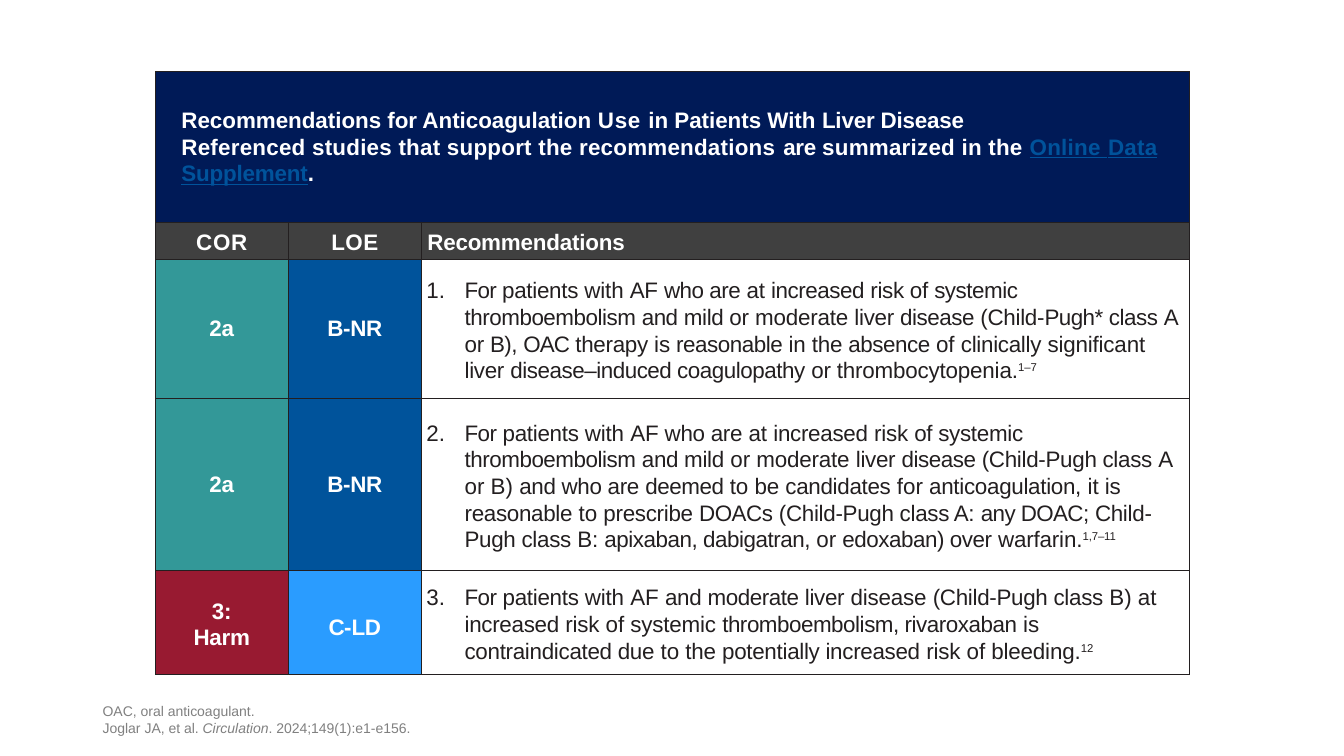
from dataclasses import dataclass
from typing import NamedTuple

from lxml.etree import SubElement
from pptx import Presentation
from pptx.dml.color import RGBColor
from pptx.enum.text import MSO_ANCHOR, PP_ALIGN
from pptx.oxml.ns import qn
from pptx.util import Emu, Inches, Pt


@dataclass(frozen=True)
class Theme:
    font: str = "Arial"
    body: float = 16
    reference: float = 14
    note: float = 10
    border: float = 0.25
    white: str = "FFFFFF"
    ink: str = "231F20"
    gray: str = "808080"
    navy: str = "001A57"
    charcoal: str = "404040"
    teal: str = "339898"
    blue: str = "00539B"
    sky: str = "2A9CFF"
    crimson: str = "981A31"


THEME = Theme()
PAGE_WIDTH, PAGE_HEIGHT = Inches(13.33), Inches(7.5)
# Percent of the page's width and height
TABLE_LEFT, TABLE_TOP = 11.55, 9.47
COLUMNS = (9.9, 9.9, 57.15)
ROWS = (19.87, 4.93, 18.4, 22.8, 13.73)


class Span(NamedTuple):
    text: str
    spacing: float = 0
    color: str = THEME.white
    bold: bool = True
    size: float = THEME.body
    underline: bool = False
    italic: bool = False
    raised: bool = False


class Para(NamedTuple):
    spans: list[Span]
    align: PP_ALIGN = PP_ALIGN.LEFT
    before: float = 0
    line: float = 1
    left: float = 0
    hang: float = 0
    number: int = 0


class Entry(NamedTuple):
    paras: list[Para]
    fill: str
    margins: tuple[float, float, float, float] = (0, 0, 0, 0)


def across(percent: float) -> Emu:
    return Emu(round(PAGE_WIDTH * percent / 100))


def down(percent: float) -> Emu:
    return Emu(round(PAGE_HEIGHT * percent / 100))


def centered(*spans: Span, before: float = 0) -> Para:
    return Para(list(spans), PP_ALIGN.CENTER, before)


def heading(para: Para) -> Entry:
    return Entry([para], THEME.charcoal, (0, 0.04, 0, 0))


def link(text: str, spacing: float = 0.2) -> Span:
    return Span(text, spacing, THEME.blue, underline=True)


def note(text: str, italic: bool = False) -> Span:
    return Span(text, 0, THEME.gray, False, THEME.note, italic=italic)


def recommendation(number: int, before: float, pieces: list[tuple[str, float]], reference: str) -> Entry:
    """Numbered statement from (text, letter spacing) pieces, with raised citations."""
    spans = [Span(text, spacing, THEME.ink, False) for text, spacing in pieces]
    spans.append(Span(reference, -0.1, THEME.ink, False, THEME.reference, raised=True))
    para = Para(spans, before=before, line=1.07, left=0.43, hang=-0.38, number=number)
    return Entry([para], THEME.white, (0, 0.03, 0, 0))


TITLE = Entry([
    Para([Span("Recommendations for Anticoagulation "), Span("Use ", 0.6),
          Span("in Patients With "), Span("Liver Disease", -0.1)], before=2.5, line=1.07, left=0.06),
    Para([Span("Referenced studies that support the recommendations ", 0.2), Span("are ", -0.2),
          Span("summarized in the ", 0.2), link("Online"), link(" ", 0.7), link("Data"),
          link(" ", 0.7), link("Supplement", -0.1), Span(".", -0.1)], line=1.07, left=0.06),
], THEME.navy, (0.2, 0.2, 0.2, 0.2))

CLASS_2A = Entry([centered(Span("2a", -0.2))], THEME.teal)
LEVEL_B = Entry([centered(Span("B-NR", -0.2))], THEME.blue)
HARM = Entry([centered(Span("3:", -0.2)), centered(Span("Harm", -0.2), before=0.6)],
             THEME.crimson, (0, 0.05, 0, 0))
LEVEL_C = Entry([centered(Span("C-", -0.4), Span("LD", -0.2))], THEME.sky, (0, 0.11, 0, 0))

TABLE_ROWS = [
    [TITLE],
    [heading(centered(Span("COR", 0.5), before=3)),
     heading(centered(Span("LOE", 0.4), before=3)),
     heading(Para([Span("Recommendations", -0.1)], before=3, left=0.06))],
    [CLASS_2A, LEVEL_B, recommendation(1, 2.3, [
        ("For ", -0.5), ("patients ", -0.2), ("with ", -0.1), ("AF ", -0.2), ("who are ", -0.3),
        ("at ", -0.1), ("increased ", -0.3), ("risk of ", -0.2), ("systemic thromboembolism ", -0.3),
        ("and ", -0.4), ("mild or ", -0.2), ("moderate ", -0.1), ("liver ", -0.2), ("disease ", -0.3),
        ("(Child-", -0.2), ("Pugh* ", -0.4), ("class ", -0.3), ("A ", 0), ("or ", -0.2), ("B), ", -0.4),
        ("OAC ", -0.6), ("therapy ", -0.2), ("is ", -0.1), ("reasonable ", -0.3), ("in ", -0.1),
        ("the ", -0.2), ("absence ", -0.3), ("of ", 0), ("clinically ", -0.2), ("significant ", -0.1),
        ("liver ", -0.2), ("disease–induced coagulopathy ", -0.3), ("or ", -0.2),
        ("thrombocytopenia.", -0.1)], "1–7")],
    [CLASS_2A, LEVEL_B, recommendation(2, 1.9, [
        ("For ", -0.4), ("patients ", -0.2), ("with ", -0.1), ("AF", 0), (" who are ", -0.2), ("at ", 0),
        ("increased ", -0.2), ("risk ", -0.1), ("of systemic ", -0.2), ("thromboembolism ", -0.3),
        ("and mild ", -0.2), ("or ", 0), ("moderate ", -0.1), ("liver ", -0.2), ("disease ", -0.3),
        ("(Child-Pugh class ", -0.2), ("A or B) ", 0), ("and who are ", -0.2), ("deemed ", -0.3),
        ("to ", 0), ("be ", -0.1), ("candidates ", -0.2), ("for ", 0), ("anticoagulation, ", -0.2),
        ("it ", 0), ("is reasonable ", -0.2), ("to ", 0), ("prescribe ", -0.2), ("DOACs ", -0.3),
        ("(Child-Pugh class A: ", -0.2), ("any DOAC; ", -0.4), ("Child-Pugh class ", -0.2),
        ("B: ", -0.1), ("apixaban, dabigatran, ", -0.3), ("or ", 0), ("edoxaban) over", -0.3),
        (" warfarin.", -0.1)], "1,7–11")],
    [HARM, LEVEL_C, recommendation(3, 1.9, [
        ("For ", -0.4), ("patients ", -0.2), ("with ", -0.1), ("AF ", 0), ("and ", -0.2),
        ("moderate ", -0.3), ("liver ", -0.2), ("disease ", -0.1), ("(Child-Pugh class ", -0.2),
        ("B) at ", 0), ("increased", -0.2), (" risk ", -0.1), ("of", 0), (" systemic ", -0.1),
        ("thromboembolism, rivaroxaban ", -0.3), ("is ", 0), ("contraindicated due ", -0.2), ("to", 0),
        (" the ", -0.1), ("potentially increased", -0.2), (" risk ", -0.1), ("of", 0),
        (" bleeding.", -0.1)], "12")],
]

FOOTNOTE = [
    Para([note("OAC, oral anticoagulant.")]),
    Para([note("Joglar JA, et al. "), note("Circulation", italic=True), note(". 2024;149(1):e1-e156.")]),
]


def write(frame, paras: list[Para]) -> None:
    for index, item in enumerate(paras):
        para = frame.add_paragraph() if index else frame.paragraphs[0]
        properties = para._p.get_or_add_pPr()
        properties.set("marL", str(Inches(item.left)))
        properties.set("indent", str(Inches(item.hang)))
        if item.number:
            SubElement(properties, qn("a:buAutoNum"), type="arabicPeriod", startAt=str(item.number))
        para.alignment = item.align
        para.line_spacing = item.line
        para.space_before = Pt(item.before)
        for piece in item.spans:
            span = para.add_run()
            span.text = piece.text
            font = span.font
            font.name, font.size = THEME.font, Pt(piece.size)
            font.bold, font.italic, font.underline = piece.bold, piece.italic, piece.underline
            font.color.rgb = RGBColor.from_string(piece.color)
            settings = span._r.get_or_add_rPr()
            settings.set("spc", str(round(piece.spacing * 100)))
            if piece.raised:
                settings.set("baseline", "35000")


def add_borders(cell) -> None:
    properties = cell._tc.get_or_add_tcPr()
    for side in ("lnL", "lnR", "lnT", "lnB"):
        line = SubElement(properties, qn(f"a:{side}"), w=str(Pt(THEME.border)))
        SubElement(SubElement(line, qn("a:solidFill")), qn("a:srgbClr"), val=THEME.ink)


def fill_cell(cell, entry: Entry) -> None:
    cell.fill.solid()
    cell.fill.fore_color.rgb = RGBColor.from_string(entry.fill)
    cell.vertical_anchor = MSO_ANCHOR.MIDDLE
    cell.margin_left, cell.margin_top, cell.margin_right, cell.margin_bottom = map(Inches, entry.margins)
    write(cell.text_frame, entry.paras)


def add_recommendation_table(page) -> None:
    table = page.shapes.add_table(len(ROWS), len(COLUMNS), across(TABLE_LEFT), down(TABLE_TOP),
                                  across(sum(COLUMNS)), down(sum(ROWS))).table
    table.first_row = table.horz_banding = False
    for column, share in zip(table.columns, COLUMNS):
        column.width = across(share)
    for row, share in zip(table.rows, ROWS):
        row.height = down(share)
    for cell in table.iter_cells():
        add_borders(cell)
    table.cell(0, 0).merge(table.cell(0, len(COLUMNS) - 1))
    for row, entries in enumerate(TABLE_ROWS):
        for column, entry in enumerate(entries):
            fill_cell(table.cell(row, column), entry)


def add_footnote(page) -> None:
    box = page.shapes.add_textbox(across(6.9), down(92.67), across(86.27), down(5.33))
    box.text_frame.word_wrap = True
    box.text_frame.vertical_anchor = MSO_ANCHOR.BOTTOM
    write(box.text_frame, FOOTNOTE)


def main() -> None:
    deck = Presentation()
    deck.slide_width, deck.slide_height = PAGE_WIDTH, PAGE_HEIGHT
    page = deck.slides.add_slide(deck.slide_layouts[6])
    add_recommendation_table(page)
    add_footnote(page)
    deck.save("out.pptx")


if __name__ == "__main__":
    main()
